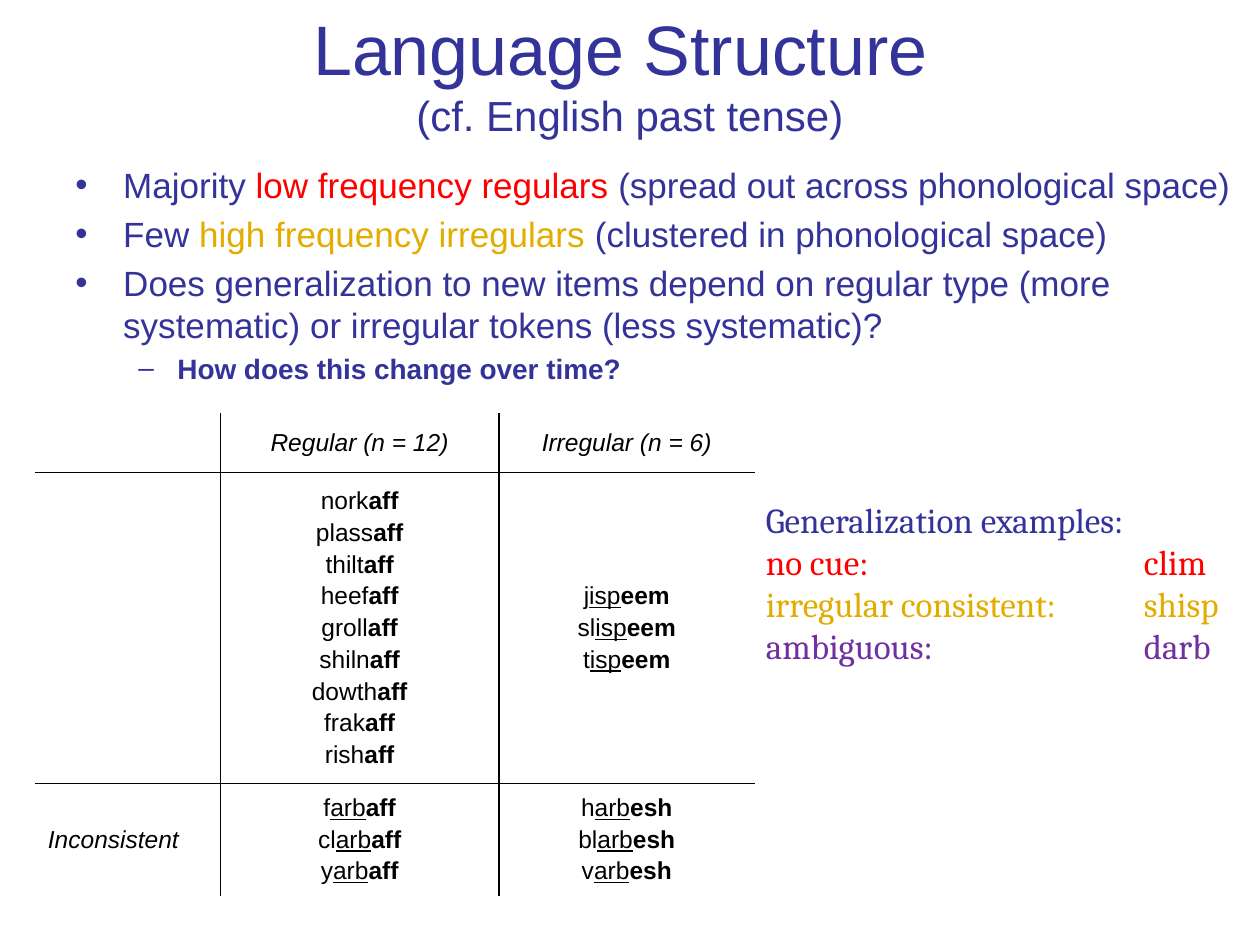
import dataclasses

import lxml.etree
import pptx
import pptx.dml.color
import pptx.enum.text
import pptx.oxml.ns
import pptx.util

Inches = pptx.util.Inches
Pt = pptx.util.Pt
Align = pptx.enum.text.PP_ALIGN
Anchor = pptx.enum.text.MSO_ANCHOR
qn = pptx.oxml.ns.qn


@dataclasses.dataclass(frozen=True)
class Theme:
    navy: str = "333399"
    red: str = "FF0000"
    gold: str = "E2AC00"
    purple: str = "7030A0"
    black: str = "000000"
    sans: str = "Arial"
    serif: str = "Cambria"
    title: int = 40
    subtitle: int = 24
    body: int = 20
    detail: int = 16
    table: int = 14


THEME = Theme()


def format_run(run, size, color, font=THEME.sans, bold=False, italic=False, underline=False):
    run.font.name = font
    run.font.size = Pt(size)
    run.font.color.rgb = pptx.dml.color.RGBColor.from_string(color)
    run.font.bold = bold
    run.font.italic = italic
    run.font.underline = underline


def add_run(paragraph, text, size, color, **style):
    run = paragraph.add_run()
    run.text = text
    format_run(run, size, color, **style)


def add_text_frame(slide, box):
    text_frame = slide.shapes.add_textbox(*box).text_frame
    text_frame.word_wrap = True
    return text_frame


def next_paragraph(text_frame, index):
    return text_frame.add_paragraph() if index else text_frame.paragraphs[0]


def set_bullet(paragraph, character, left, hanging):
    properties = paragraph._p.get_or_add_pPr()
    properties.set("marL", str(left))
    properties.set("indent", str(-hanging))
    font = lxml.etree.SubElement(properties, qn("a:buFont"))
    font.set("typeface", THEME.sans)
    bullet = lxml.etree.SubElement(properties, qn("a:buChar"))
    bullet.set("char", character)


def set_tab_stop(paragraph, position):
    tabs = lxml.etree.SubElement(paragraph._p.get_or_add_pPr(), qn("a:tabLst"))
    tab = lxml.etree.SubElement(tabs, qn("a:tab"))
    tab.set("pos", str(position))
    tab.set("algn", "l")


def set_borders(cell, visible_sides):
    properties = cell._tc.get_or_add_tcPr()
    for side in "LRTB":
        line = lxml.etree.SubElement(properties, qn(f"a:ln{side}"))
        line.set("w", str(Pt(1)))
        if side in visible_sides:
            fill = lxml.etree.SubElement(line, qn("a:solidFill"))
            lxml.etree.SubElement(fill, qn("a:srgbClr")).set("val", THEME.black)
        else:
            lxml.etree.SubElement(line, qn("a:noFill"))


def add_title(slide, box):
    text_frame = add_text_frame(slide, box)
    text_frame.vertical_anchor = Anchor.MIDDLE
    paragraph = text_frame.paragraphs[0]
    paragraph.text = "Language Structure \v(cf. English past tense)"
    paragraph.alignment = Align.CENTER
    for run, size in zip(paragraph.runs, (THEME.title, THEME.subtitle)):
        format_run(run, size, THEME.navy)


def add_bullets(slide, box):
    text_frame = add_text_frame(slide, box)
    points = [
        [("Majority ", THEME.navy), ("low frequency regulars ", THEME.red),
         ("(spread out across phonological space)", THEME.navy)],
        [("Few ", THEME.navy), ("high frequency irregulars ", THEME.gold),
         ("(clustered in phonological space)", THEME.navy)],
        [("Does generalization to new items depend on regular type (more "
          "systematic) or irregular tokens (less systematic)?", THEME.navy)],
    ]
    for index, parts in enumerate(points):
        paragraph = next_paragraph(text_frame, index)
        paragraph.space_before = Pt(4)
        set_bullet(paragraph, "•", Inches(0.38), Inches(0.38))
        for text, color in parts:
            add_run(paragraph, text, THEME.body, color)
    paragraph = text_frame.add_paragraph()
    paragraph.level = 1
    paragraph.space_before = Pt(3.2)
    set_bullet(paragraph, "–", Inches(0.81), Inches(0.31))
    add_run(paragraph, "How does this change over time?", THEME.detail, THEME.navy, bold=True)


def fill_label(cell, text, alignment):
    paragraph = cell.text_frame.paragraphs[0]
    paragraph.text = text
    paragraph.alignment = alignment
    paragraph.space_before = Pt(2.4)
    format_run(paragraph.runs[0], THEME.table, THEME.black, italic=True)


def fill_words(cell, stems, rime, suffix):
    for index, stem in enumerate(stems.split()):
        paragraph = next_paragraph(cell.text_frame, index)
        paragraph.alignment = Align.CENTER
        paragraph.space_before = Pt(2.4)
        add_run(paragraph, stem, THEME.table, THEME.black)
        if rime:
            add_run(paragraph, rime, THEME.table, THEME.black, underline=True)
        add_run(paragraph, suffix, THEME.table, THEME.black, bold=True)


def add_word_table(slide, box):
    table = slide.shapes.add_table(3, 3, *box).table
    table.first_row = False
    table.horz_banding = False
    for column, width in zip(table.columns, (1.47, 2.21, 2.03)):
        column.width = Inches(width)
    for row, height in zip(table.rows, (0.47, 2.47, 0.89)):
        row.height = Inches(height)
    for row in range(3):
        for column in range(3):
            cell = table.cell(row, column)
            cell.vertical_anchor = Anchor.MIDDLE
            set_borders(cell, ("", "L", "L")[column] + ("R", "R", "")[column]
                        + ("B", "TB", "T")[row])
            cell.fill.background()
    fill_label(table.cell(0, 1), "Regular (n = 12)", Align.CENTER)
    fill_label(table.cell(0, 2), "Irregular (n = 6)", Align.CENTER)
    fill_label(table.cell(2, 0), "Inconsistent", Align.LEFT)
    fill_words(table.cell(1, 1), "nork plass thilt heef groll shiln dowth frak rish", "", "aff")
    fill_words(table.cell(1, 2), "j sl t", "isp", "eem")
    fill_words(table.cell(2, 1), "f cl y", "arb", "aff")
    fill_words(table.cell(2, 2), "h bl v", "arb", "esh")


def add_examples(slide, box):
    text_frame = add_text_frame(slide, box)
    lines = [
        ("Generalization examples:", THEME.navy),
        ("no cue:\tclim", THEME.red),
        ("irregular consistent:\tshisp", THEME.gold),
        ("ambiguous:\tdarb", THEME.purple),
    ]
    for index, (text, color) in enumerate(lines):
        paragraph = next_paragraph(text_frame, index)
        set_tab_stop(paragraph, Inches(3))
        add_run(paragraph, text, THEME.body, color, font=THEME.serif)


def main():
    presentation = pptx.Presentation()
    presentation.slide_width = Inches(10)
    presentation.slide_height = Inches(7.5)
    slide = presentation.slides.add_slide(presentation.slide_layouts[6])
    add_word_table(slide, (Inches(0.28), Inches(3.28), Inches(5.71), Inches(3.83)))
    add_examples(slide, (Inches(5.98), Inches(3.91), Inches(4.14), Inches(1.45)))
    add_title(slide, (Inches(0.75), Inches(0.11), Inches(8.5), Inches(0.93)))
    add_bullets(slide, (Inches(0.5), Inches(1.25), Inches(9.46), Inches(1.48)))
    presentation.save("out.pptx")


if __name__ == "__main__":
    main()
